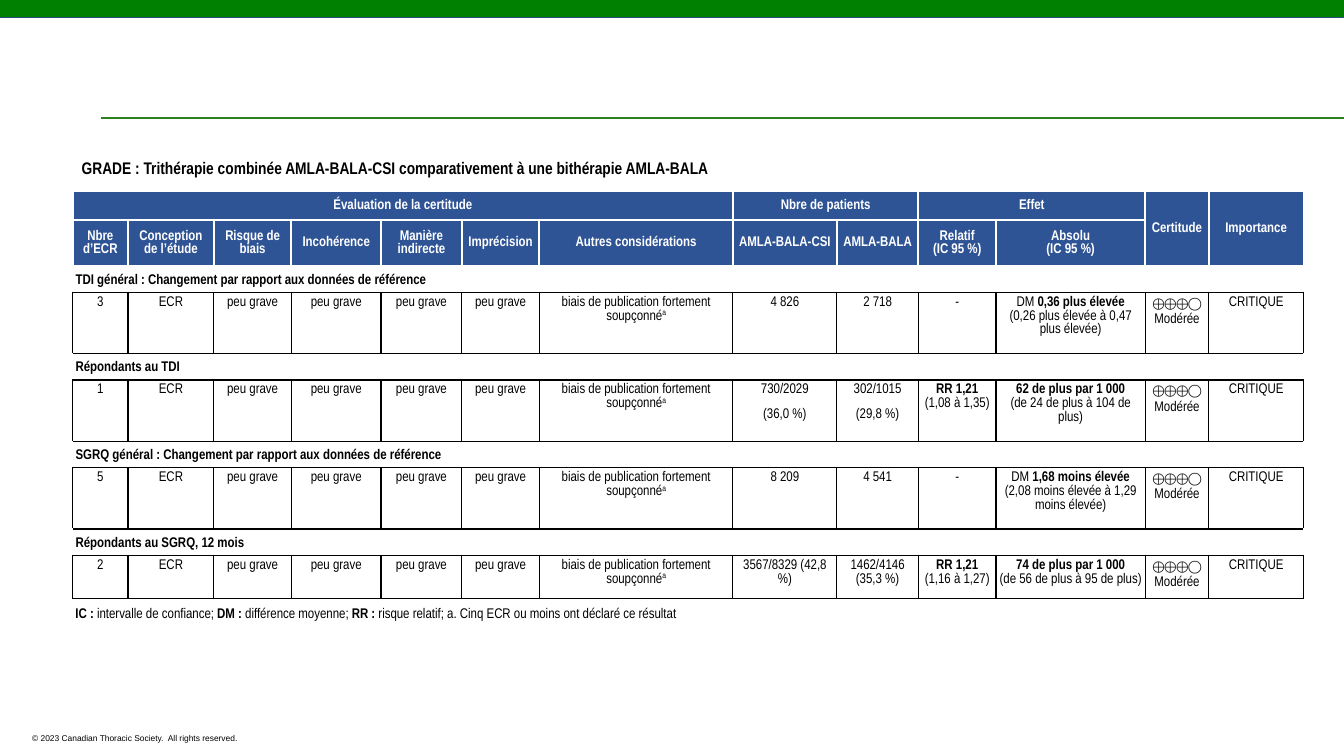
from lxml import etree
from pptx import Presentation
from pptx.dml.color import RGBColor
from pptx.enum.shapes import MSO_CONNECTOR, MSO_SHAPE
from pptx.enum.text import MSO_ANCHOR, PP_ALIGN
from pptx.oxml.ns import qn
from pptx.util import Inches, Pt

RECT = MSO_SHAPE.RECTANGLE
STRAIGHT = MSO_CONNECTOR.STRAIGHT
TOP, MIDDLE = MSO_ANCHOR.TOP, MSO_ANCHOR.MIDDLE
LEFT, CENTER = PP_ALIGN.LEFT, PP_ALIGN.CENTER

COLORS = {
    "black": "000000",
    "white": "FFFFFF",
    "header": "2F5496",
    "bar": "008000",
    "bar_line": "265178",
    "rule": "2F7E20",
}
BODY, SYMBOLS, FOOTER = "Arial Narrow", "Cambria", "Arial"

COLUMNS = [0.55, 0.85, 0.77, 0.89, 0.8, 0.77, 1.92, 1.03, 0.81, 0.77, 1.48, 0.63, 0.94]
HEADER_HEIGHTS = [0.28, 0.46]
SECTION_HEIGHT = 0.26

GROUPS = [
    (0, 0, 0, 6, "Évaluation de la certitude"),
    (0, 7, 0, 8, "Nbre de patients"),
    (0, 9, 0, 10, "Effet"),
    (0, 11, 1, 11, "Certitude"),
    (0, 12, 1, 12, "Importance"),
]
HEADINGS = [
    "Nbre d’ECR", "Conception de l’étude", "Risque de biais", "Incohérence",
    "Manière indirecte", "Imprécision", "Autres considérations", "AMLA-BALA-CSI",
    "AMLA-BALA", "Relatif\n(IC 95 %)", "Absolu\n(IC 95 %)",
]
BIAS = ["peu grave"] * 4 + ["biais de publication fortement soupçonné^a"]
RATING = ["⨁⨁⨁◯\nModérée", "CRITIQUE"]
SECTIONS = [
    ("TDI général : Changement par rapport aux données de référence", 0.61, "3",
     ["4 826", "2 718", "-",
      "DM *0,36 plus élevée*\n(0,26 plus élevée à 0,47 plus élevée)"]),
    ("Répondants au TDI", 0.61, "1",
     ["730/2029|(36,0 %)", "302/1015|(29,8 %)", "*RR 1,21*\n(1,08 à 1,35)",
      "*62 de plus par 1 000*\n(de 24 de plus à 104 de plus)"]),
    ("SGRQ général : Changement par rapport aux données de référence", 0.61, "5",
     ["8 209", "4 541", "-",
      "DM *1,68 moins élevée*\n(2,08 moins élevée à 1,29 moins élevée)"]),
    ("Répondants au SGRQ, 12 mois", 0.43, "2",
     ["3567/8329 (42,8 %)", "1462/4146 (35,3 %)", "*RR 1,21*\n(1,16 à 1,27)",
      "*74 de plus par 1 000*\n(de 56 de plus à 95 de plus)"]),
]


class SlideBuilder:
    def __init__(self, prs):
        self.s = prs.slides.add_slide(prs.slide_layouts[5])

    def color(self, name):
        return RGBColor.from_string(COLORS[name])

    def paragraph(self, p, text, size=10, font=BODY, color="black", bold=False, align=LEFT):
        p.alignment = align
        p.font.size, p.font.name, p.font.bold = Pt(size), font, bold
        p.font.color.rgb = self.color(color)
        for i, part in enumerate(text.split("*")):
            for j, piece in enumerate(part.split("^")):
                for k, line in enumerate(piece.split("\n")):
                    if k:
                        p.add_line_break()
                    if line:
                        r = p.add_run()
                        r.text = line
                        if i % 2:
                            r.font.bold = True
                        if j:
                            r._r.get_or_add_rPr().set("baseline", "30000")
                        if line.startswith("⨁"):
                            r.font.name = SYMBOLS

    def bar(self, left, top, width, height):
        sp = self.s.shapes.add_shape(RECT, *map(Inches, (left, top, width, height)))
        sp.shadow.inherit = False
        sp.fill.solid()
        sp.fill.fore_color.rgb = self.color("bar")
        sp.line.color.rgb = self.color("bar_line")
        sp.line.width = Pt(0.75)

    def rule(self, x1, y1, x2, y2):
        line = self.s.shapes.add_connector(STRAIGHT, *map(Inches, (x1, y1, x2, y2)))
        line.line.color.rgb = self.color("rule")
        line.line.width = Pt(1)
        etree.SubElement(line._element.spPr, qn("a:effectLst"))

    def title(self, left, top, width, height, text):
        sp = self.s.shapes.title
        sp.left, sp.top, sp.width, sp.height = map(Inches, (left, top, width, height))
        tf = sp.text_frame
        tf.vertical_anchor = TOP
        self.paragraph(tf.paragraphs[0], text, size=12, bold=True)

    def text(self, left, top, width, height, text, anchor=TOP, **style):
        sp = self.s.shapes.add_textbox(*map(Inches, (left, top, width, height)))
        tf = sp.text_frame
        tf.word_wrap = True
        tf.vertical_anchor = anchor
        self.paragraph(tf.paragraphs[0], text, **style)

    def table(self, left, top, columns, heights):
        frame = self.s.shapes.add_table(
            len(heights), len(columns), Inches(left), Inches(top),
            Inches(sum(columns)), Inches(sum(heights)))
        table = frame.table
        table.first_row = table.horz_banding = False
        for column, width in zip(table.columns, columns):
            column.width = Inches(width)
        for row, height in zip(table.rows, heights):
            row.height = Inches(height)
        return table

    def box(self, cell, fill, borders):
        if fill:
            cell.fill.solid()
            cell.fill.fore_color.rgb = self.color(fill)
        else:
            cell.fill.background()
        tcPr = cell._tc.get_or_add_tcPr()
        for i, (side, color, width) in enumerate(borders):
            ln = etree.Element(qn("a:ln" + side), w=str(Pt(width)))
            solid = etree.SubElement(ln, qn("a:solidFill"))
            etree.SubElement(solid, qn("a:srgbClr"), val=COLORS[color])
            tcPr.insert(i, ln)

    def fill_cell(self, cell, text, margins, anchor=TOP, **style):
        cell.margin_left, cell.margin_top, cell.margin_right, cell.margin_bottom = map(
            Inches, margins)
        cell.vertical_anchor = anchor
        tf = cell.text_frame
        for i, part in enumerate(text.split("|")):
            p = tf.add_paragraph() if i else tf.paragraphs[0]
            p.line_spacing, p.space_after = 1.07, Pt(8)
            self.paragraph(p, part, **style)

    def header(self, table):
        for row in range(2):
            for col in range(len(COLUMNS)):
                self.box(table.cell(row, col), "header", [(d, "white", 1.5) for d in "LRTB"])
        for top, left, bottom, right, _ in GROUPS:
            table.cell(top, left).merge(table.cell(bottom, right))
        labels = [(top, left, text) for top, left, _, _, text in GROUPS]
        labels += [(1, col, text) for col, text in enumerate(HEADINGS)]
        for row, col, text in labels:
            self.fill_cell(table.cell(row, col), text, [0.05] * 4, MIDDLE,
                           color="white", bold=True, align=CENTER)

    def section(self, table, row, name, values):
        top = ("T", "white", 1.5) if row == 2 else ("T", "black", 1)
        for col, value in enumerate(values):
            self.box(table.cell(row, col), "white", [top, ("B", "black", 1)])
            cell = table.cell(row + 1, col)
            self.box(cell, None, [(d, "black", 1) for d in "LRTB"])
            self.fill_cell(cell, value, [0.03] * 4, align=CENTER)
        band = table.cell(row, 0)
        band.merge(table.cell(row, len(values) - 1))
        self.fill_cell(band, name, [0.03, 0.05, 0.03, 0.03], MIDDLE, bold=True)


def main():
    prs = Presentation()
    prs.slide_width, prs.slide_height = Inches(13.33), Inches(7.5)
    b = SlideBuilder(prs)
    b.bar(0, 0, 13.33, 0.17)
    b.rule(1, 1.17, 13.33, 1.17)
    b.text(0.22, 7.22, 3.17, 0.2, "© 2023 Canadian Thoracic Society.  All rights reserved.",
           size=6, font=FOOTER)

    heights = HEADER_HEIGHTS + [h for sec in SECTIONS for h in (SECTION_HEIGHT, sec[1])]
    table = b.table(0.72, 1.9, COLUMNS, heights)
    b.header(table)
    for i, (name, _, trials, results) in enumerate(SECTIONS):
        b.section(table, 2 + 2 * i, name, [trials, "ECR"] + BIAS + results + RATING)

    b.text(0.65, 5.95, 6.44, 0.27,
           "*IC :* intervalle de confiance; *DM :* différence moyenne; *RR :* risque relatif; "
           "a. Cinq ECR ou moins ont déclaré ce résultat", anchor=MIDDLE)
    b.title(0.71, 1.51, 6.58, 0.3,
            "GRADE : Trithérapie combinée AMLA-BALA-CSI comparativement à une bithérapie AMLA-BALA")
    prs.save("out.pptx")


if __name__ == "__main__":
    main()
